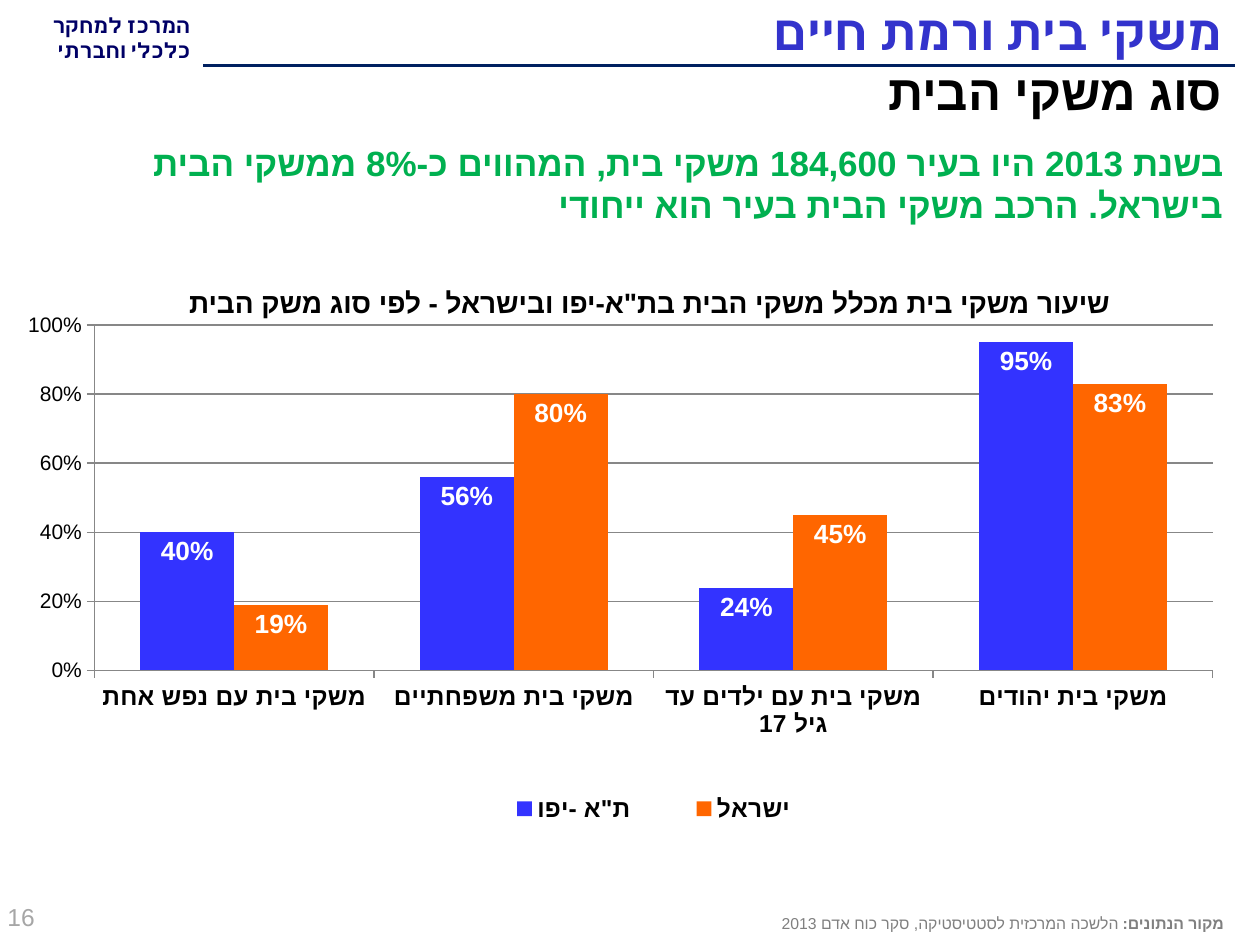
from lxml import etree
from pptx import Presentation
from pptx.chart.data import CategoryChartData
from pptx.dml.color import RGBColor
from pptx.enum.chart import XL_CHART_TYPE as ChartType
from pptx.enum.chart import XL_LABEL_POSITION as LabelPosition
from pptx.enum.chart import XL_LEGEND_POSITION as LegendPosition
from pptx.enum.chart import XL_TICK_MARK as TickMark
from pptx.enum.shapes import MSO_CONNECTOR as Connector
from pptx.enum.text import MSO_ANCHOR as Anchor
from pptx.enum.text import MSO_AUTO_SIZE as AutoSize
from pptx.enum.text import PP_ALIGN as Align
from pptx.oxml.ns import qn
from pptx.util import Cm, Pt

COLORS = {
    "navy": "000066", "rule": "002060", "title": "3333CC", "black": "000000",
    "green": "00B050", "page": "A6A6A6", "source": "808080", "grid": "878787",
    "city": "3333FF", "country": "FF6600", "white": "FFFFFF",
}


class SlideBuilder:
    def __init__(self, presentation):
        self.slide = presentation.slides.add_slide(presentation.slide_layouts[1])
        self.font_name = "Arial"

    def color(self, name):
        return RGBColor.from_string(COLORS[name])

    def style(self, font, size, color, bold=False, name=None):
        font.size = Pt(size)
        font.bold = bold
        font.name = name or self.font_name
        font.color.rgb = self.color(color)

    def fill_text(self, shape, paragraphs, size, color, name=None,
                  align=Align.RIGHT, anchor=Anchor.TOP):
        """Fill a shape with right-to-left paragraphs of (text, bold) runs."""
        frame = shape.text_frame
        frame.word_wrap = True
        frame.auto_size = AutoSize.NONE
        frame.vertical_anchor = anchor
        for index, runs in enumerate(paragraphs):
            paragraph = frame.add_paragraph() if index else frame.paragraphs[0]
            properties = paragraph._p.get_or_add_pPr()
            for key, value in (("rtl", "1"), ("marL", "0"), ("indent", "0")):
                properties.set(key, value)
            etree.SubElement(properties, qn("a:buNone"))
            paragraph.alignment = align
            paragraph.space_before = Pt(0)
            for text, bold in runs:
                run = paragraph.add_run()
                run.text = text
                self.style(run.font, size, color, bold, name)
                self.add_complex_font(run._r.get_or_add_rPr(), name)

    def add_complex_font(self, properties, name=None):
        """Hebrew letters take the complex-script typeface."""
        script = etree.SubElement(properties, qn("a:cs"))
        script.set("typeface", name or self.font_name)

    def placeholder(self, index, box, *args, **options):
        shape = self.slide.placeholders[index]
        shape.left, shape.top, shape.width, shape.height = map(Cm, box)
        self.fill_text(shape, *args, **options)

    def text(self, box, *args, **options):
        shape = self.slide.shapes.add_textbox(*map(Cm, box))
        self.fill_text(shape, *args, **options)

    def line(self, start, end, color, width):
        connector = self.slide.shapes.add_connector(
            Connector.STRAIGHT, *map(Cm, start + end))
        connector.line.color.rgb = self.color(color)
        connector.line.width = Pt(width)
        etree.SubElement(connector._element.spPr, qn("a:effectLst"))

    def manual_layout(self, position, inner=False):
        layout = etree.Element(qn("c:layout"))
        manual = etree.SubElement(layout, qn("c:manualLayout"))
        entries = [("layoutTarget", "inner")] if inner else []
        entries += [("xMode", "edge"), ("yMode", "edge")]
        entries += zip("xywh", position)
        for tag, value in entries:
            etree.SubElement(manual, qn(f"c:{tag}")).set("val", str(value))
        return layout

    def column_chart(self, box, categories, series):
        data = CategoryChartData(number_format="0%")
        data.categories = categories
        for name, values, _ in series:
            data.add_series(name, values)
        chart = self.slide.shapes.add_chart(
            ChartType.COLUMN_CLUSTERED, *map(Cm, box), data).chart
        chart.has_title = False
        self.style(chart.font, 12, "black")

        # Columns and their labels
        plot = chart.plots[0]
        plot.gap_width, plot.overlap = 98, 0
        plot.vary_by_categories = False
        for column, (_, _, color) in zip(plot.series, series):
            column.format.fill.solid()
            column.format.fill.fore_color.rgb = self.color(color)
            labels = column.data_labels
            labels.show_value = True
            labels.number_format, labels.number_format_is_linked = "0%", False
            labels.position = LabelPosition.INSIDE_END
            self.style(labels.font, 15, "white", True)

        # Axes
        value_axis, category_axis = chart.value_axis, chart.category_axis
        value_axis.minimum_scale, value_axis.maximum_scale = 0, 1
        value_axis.major_unit = 0.2
        value_axis.has_major_gridlines = True
        value_axis.tick_labels.number_format = "0%"
        value_axis.tick_labels.number_format_is_linked = False
        self.style(category_axis.tick_labels.font, 14, "black", True)
        for axis in (value_axis, category_axis):
            axis.major_tick_mark = TickMark.OUTSIDE
            axis.format.line.color.rgb = self.color("grid")
        value_axis.major_gridlines.format.line.color.rgb = self.color("grid")

        # Legend and plot positions, as shares of the chart
        chart.has_legend = True
        legend = chart.legend
        legend.position = LegendPosition.BOTTOM
        legend.include_in_layout = False
        self.style(legend.font, 14, "black", True)
        plot_area = chart._chartSpace.chart.plotArea
        for part in (legend._element, plot_area):
            for layout in part.findall(qn("c:layout")):
                part.remove(layout)
        legend._element.find(qn("c:legendPos")).addnext(
            self.manual_layout((0.36, 0.82, 0.32, 0.08)))
        plot_area.insert(
            0, self.manual_layout((0.06, 0.02, 0.92, 0.6), inner=True))
        for properties in chart._chartSpace.iter(qn("a:defRPr")):
            if properties.find(qn("a:latin")) is not None:
                self.add_complex_font(properties)


def main():
    presentation = Presentation()
    presentation.slide_width, presentation.slide_height = Cm(25.4), Cm(19.05)
    builder = SlideBuilder(presentation)

    # Header
    builder.text((0, 0.13, 4.09, 1.3),
                 [[("המרכז למחקר", True)], [("כלכלי וחברתי", True)]],
                 12, "navy", name="Calibri")
    builder.line((24.89, 1.32), (4.09, 1.32), "rule", 2.25)
    builder.placeholder(0, (4.01, -0.08, 20.88, 1.4),
                        [[("משקי בית ורמת חיים", True)]],
                        28, "title", name="Calibri", anchor=Anchor.MIDDLE)
    builder.placeholder(1, (0.23, 1.12, 24.66, 1.52),
                        [[("סוג משקי הבית", True)]], 28, "black")

    # Chart
    builder.column_chart(
        (0.43, 6.32, 24.51, 11.61),
        ["משקי בית עם נפש אחת", "משקי בית משפחתיים",
         "משקי בית עם ילדים עד גיל 17", "משקי בית יהודים"],
        [("ת\"א -יפו", (0.4, 0.56, 0.24, 0.95), "city"),
         ("ישראל", (0.19, 0.8, 0.45, 0.83), "country")])
    builder.text((2.9, 5.64, 20.4, 0.94),
                 [[("שיעור משקי בית מכלל משקי הבית בת\"א-יפו ובישראל"
                    " - לפי סוג משק הבית", True)]],
                 16, "black", align=Align.CENTER)

    # Key message
    builder.text((0.25, 2.72, 24.66, 2.01),
                 [[("בשנת 2013 היו בעיר 184,600 משקי בית, המהווים כ-8% ממשקי הבית"
                    " בישראל. הרכב משקי הבית בעיר הוא ייחודי", True)]],
                 20, "green")

    # Footer
    builder.text((-0.1, 17.93, 5.92, 1.12), [[("16", False)]], 14, "page",
                 align=Align.LEFT, anchor=Anchor.MIDDLE)
    builder.text((7.32, 18.29, 17.6, 0.64),
                 [[("מקור הנתונים: ", True),
                   ("הלשכה המרכזית לסטטיסטיקה, סקר כוח אדם 2013", False)]],
                 9, "source")

    presentation.save("out.pptx")


if __name__ == "__main__":
    main()
